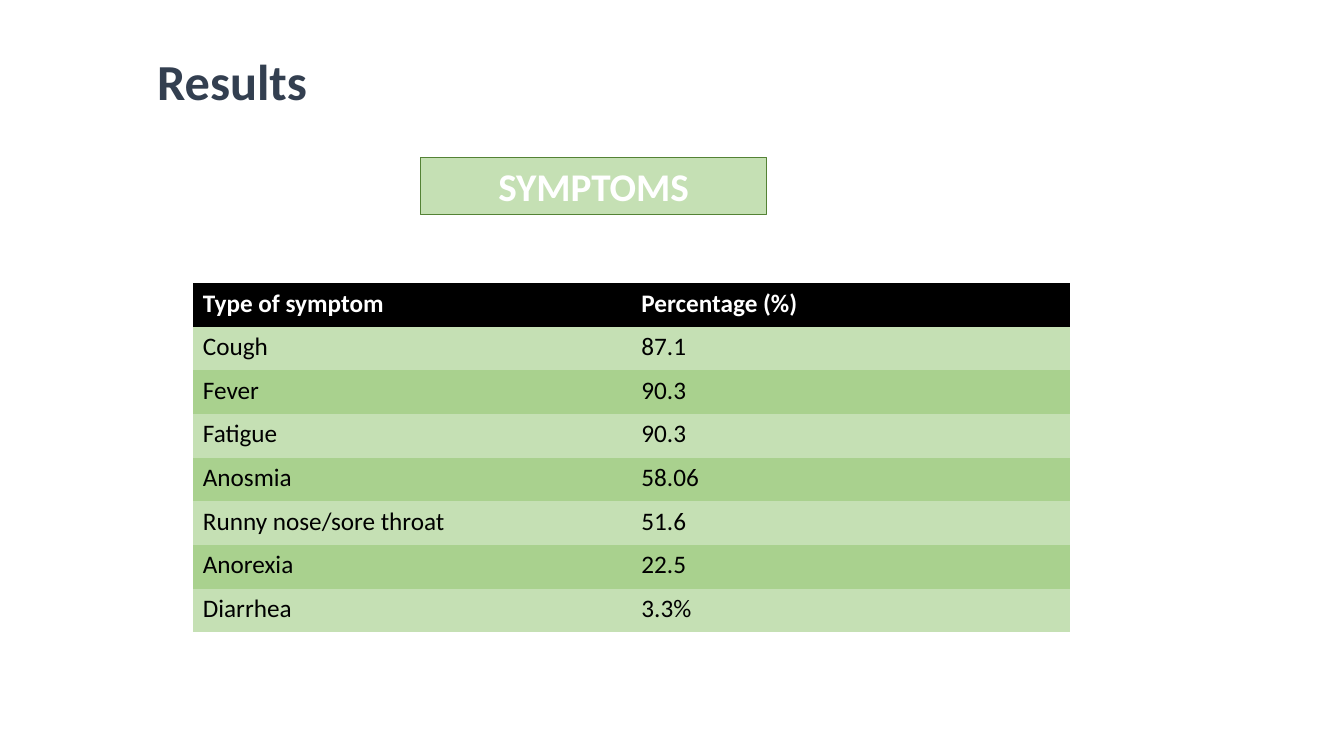
from pptx import Presentation
from pptx.dml.color import RGBColor
from pptx.enum.shapes import MSO_SHAPE
from pptx.enum.text import MSO_ANCHOR, PP_ALIGN
from pptx.util import Cm, Pt

TITLE = "Results"
BANNER = "SYMPTOMS"
HEADER = ("Type of symptom", "Percentage (%)")
SYMPTOMS = [
    ("Cough", "87.1"),
    ("Fever", "90.3"),
    ("Fatigue", "90.3"),
    ("Anosmia", "58.06"),
    ("Runny nose/sore throat", "51.6"),
    ("Anorexia", "22.5"),
    ("Diarrhea", "3.3%"),
]

FONT = "Calibri"
BLACK = RGBColor(0x00, 0x00, 0x00)
WHITE = RGBColor(0xFF, 0xFF, 0xFF)
SLATE = RGBColor(0x33, 0x3F, 0x50)
PALE_GREEN = RGBColor(0xC5, 0xE0, 0xB4)
MID_GREEN = RGBColor(0xA9, 0xD1, 0x8E)
DARK_GREEN = RGBColor(0x54, 0x82, 0x35)
NO_STYLE_NO_GRID = "{2D5ABB26-0587-4C30-8999-92F81FD0307C}"

COLUMN_WIDTH = Cm(11.05)
ROW_HEIGHT = Cm(1.1)


def write(frame, text, *, size, color, bold=False, align=PP_ALIGN.LEFT, spacing=1.0):
    frame.word_wrap = True
    paragraph = frame.paragraphs[0]
    paragraph.alignment = align
    paragraph.line_spacing = spacing
    run = paragraph.add_run()
    run.text = text
    run.font.name = FONT
    run.font.size = Pt(size)
    run.font.bold = bold
    run.font.color.rgb = color


def add_title(slide):
    title = slide.shapes.add_textbox(Cm(3.71), Cm(0.28), Cm(29.21), Cm(3.68))
    title.text_frame.vertical_anchor = MSO_ANCHOR.MIDDLE
    write(title.text_frame, TITLE, size=36, color=SLATE, bold=True, spacing=0.9)


def add_symptom_table(slide):
    rows = [HEADER, *SYMPTOMS]
    frame = slide.shapes.add_table(
        len(rows), len(HEADER), Cm(4.86), Cm(7.13),
        COLUMN_WIDTH * len(HEADER), ROW_HEIGHT * len(rows))
    table = frame.table
    table._tbl.tblPr.find("{*}tableStyleId").text = NO_STYLE_NO_GRID
    for column in table.columns:
        column.width = COLUMN_WIDTH
    for r, values in enumerate(rows):
        is_header = r == 0
        band = BLACK if is_header else (MID_GREEN, PALE_GREEN)[r % 2]
        table.rows[r].height = ROW_HEIGHT
        for c, value in enumerate(values):
            cell = table.cell(r, c)
            cell.fill.solid()
            cell.fill.fore_color.rgb = band
            write(cell.text_frame, value, size=18,
                  color=WHITE if is_header else BLACK, bold=is_header)


def add_banner(slide):
    banner = slide.shapes.add_shape(
        MSO_SHAPE.RECTANGLE, Cm(10.59), Cm(3.96), Cm(8.74), Cm(1.45))
    banner.shadow.inherit = False
    banner.fill.solid()
    banner.fill.fore_color.rgb = PALE_GREEN
    banner.line.color.rgb = DARK_GREEN
    banner.line.width = Pt(0.75)
    banner.text_frame.vertical_anchor = MSO_ANCHOR.TOP
    write(banner.text_frame, BANNER, size=28, color=WHITE, bold=True,
          align=PP_ALIGN.CENTER)


def main():
    deck = Presentation()
    deck.slide_width, deck.slide_height = Cm(33.87), Cm(19.05)
    slide = deck.slides.add_slide(deck.slide_layouts[6])
    add_title(slide)
    add_symptom_table(slide)
    add_banner(slide)
    deck.save("out.pptx")


if __name__ == "__main__":
    main()
